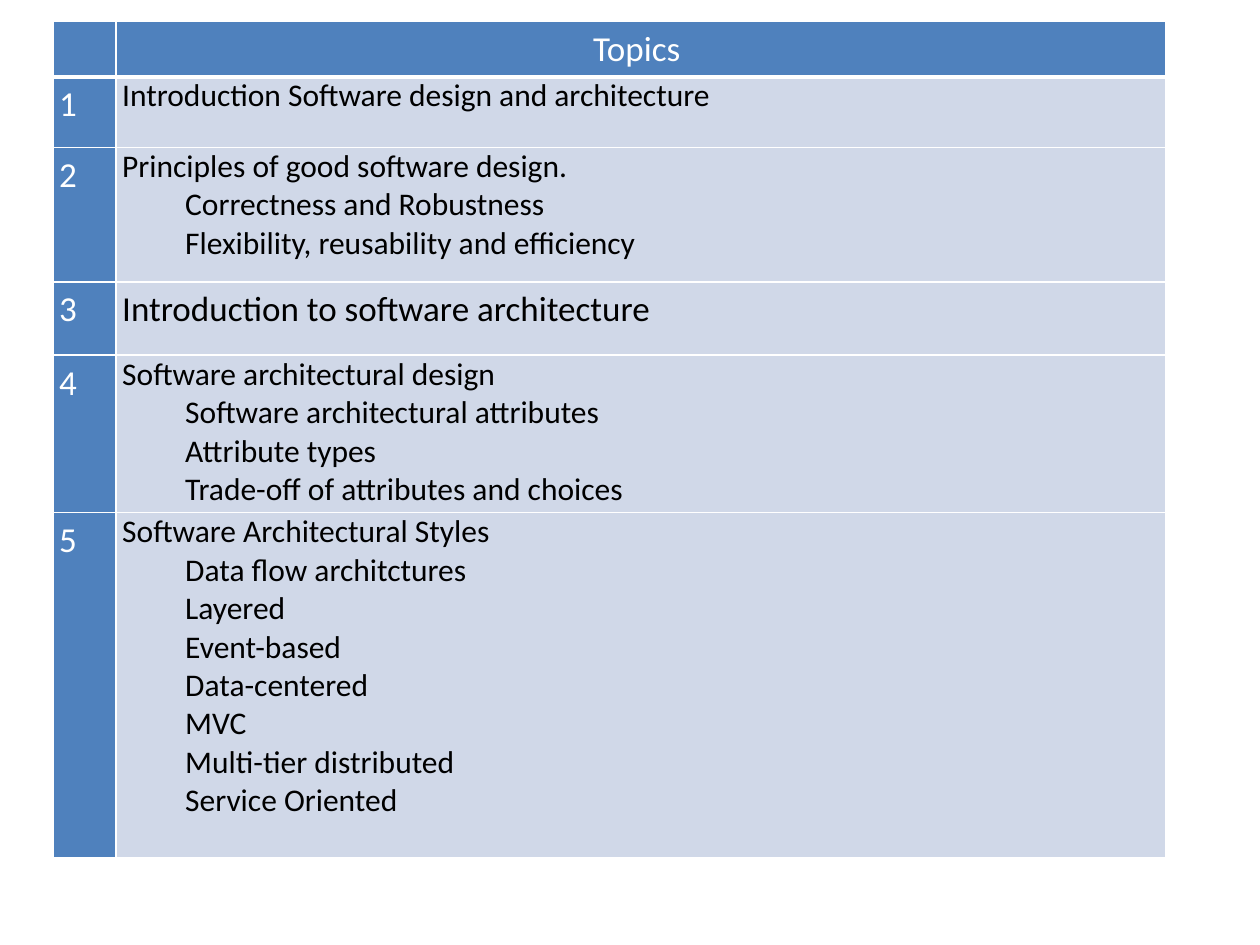
from lxml import etree
from pptx import Presentation, util as u
from pptx.dml import color
from pptx.enum import text
from pptx.oxml import ns

BLUE, PALE, WHITE, BLACK = "4F81BD", "D0D8E8", "FFFFFF", "000000"
topics = [
    ["Introduction Software design and architecture"],
    ["Principles of good software design.", "Correctness and Robustness",
     "Flexibility, reusability and efficiency"],
    ["Introduction to software architecture"],
    ["Software architectural design", "Software architectural attributes",
     "Attribute types", "Trade-off of attributes and choices"],
    ["Software Architectural Styles", "Data flow architctures", "Layered",
     "Event-based", "Data-centered", "MVC", "Multi-tier distributed",
     "Service Oriented"],
]
column_widths = [0.5, 8.33]
row_heights = [0.44, 0.56, 1.07, 0.58, 1.25, 2.74]
large_topic = 3


def rgb(value):
    return color.RGBColor.from_string(value)


def add_border(cell, side, points):
    line = etree.SubElement(cell._tc.get_or_add_tcPr(), ns.qn("a:ln" + side),
                            w=str(u.Pt(points)))
    fill = etree.SubElement(line, ns.qn("a:solidFill"))
    etree.SubElement(fill, ns.qn("a:srgbClr"), val=WHITE)


deck = Presentation()
deck.slide_width, deck.slide_height = u.Inches(10), u.Inches(7.5)
slide = deck.slides.add_slide(deck.slide_layouts[6])
outline = slide.shapes.add_table(
    len(row_heights), len(column_widths), u.Inches(0.42), u.Inches(0.17),
    u.Inches(sum(column_widths)), u.Inches(sum(row_heights))).table
for column, width in zip(outline.columns, column_widths):
    column.width = u.Inches(width)
for row, height in zip(outline.rows, row_heights):
    row.height = u.Inches(height)

entries = [("", ["Topics "])]
entries += [(str(number), lines) for number, lines in enumerate(topics, 1)]
for row, (number, lines) in enumerate(entries):
    for column, content in enumerate([number, "\n".join(lines)]):
        cell = outline.cell(row, column)
        heading = row == 0 or column == 0
        large = heading or row == large_topic
        for side in "LRTB":
            add_border(cell, side, 3 if row == 0 and side == "B" else 1)
        cell.fill.solid()
        cell.fill.fore_color.rgb = rgb(BLUE if heading else PALE)
        cell.margin_left = cell.margin_right = u.Inches(0.05)
        cell.margin_top = cell.margin_bottom = 0
        cell.text_frame.text = content
        for position, paragraph in enumerate(cell.text_frame.paragraphs):
            if position:
                paragraph.level = 1
                properties = paragraph._p.get_or_add_pPr()
                properties.set("marL", str(u.Inches(0.5)))
                properties.set("indent", "0")
            if row == 0:
                paragraph.alignment = text.PP_ALIGN.CENTER
            paragraph.line_spacing = 1.15 if large else 1.0
            for run in paragraph.runs:
                run.font.name = "Calibri"
                run.font.size = u.Pt(20 if large else 18)
                run.font.bold = False
                run.font.color.rgb = rgb(WHITE if heading else BLACK)

deck.save("out.pptx")
